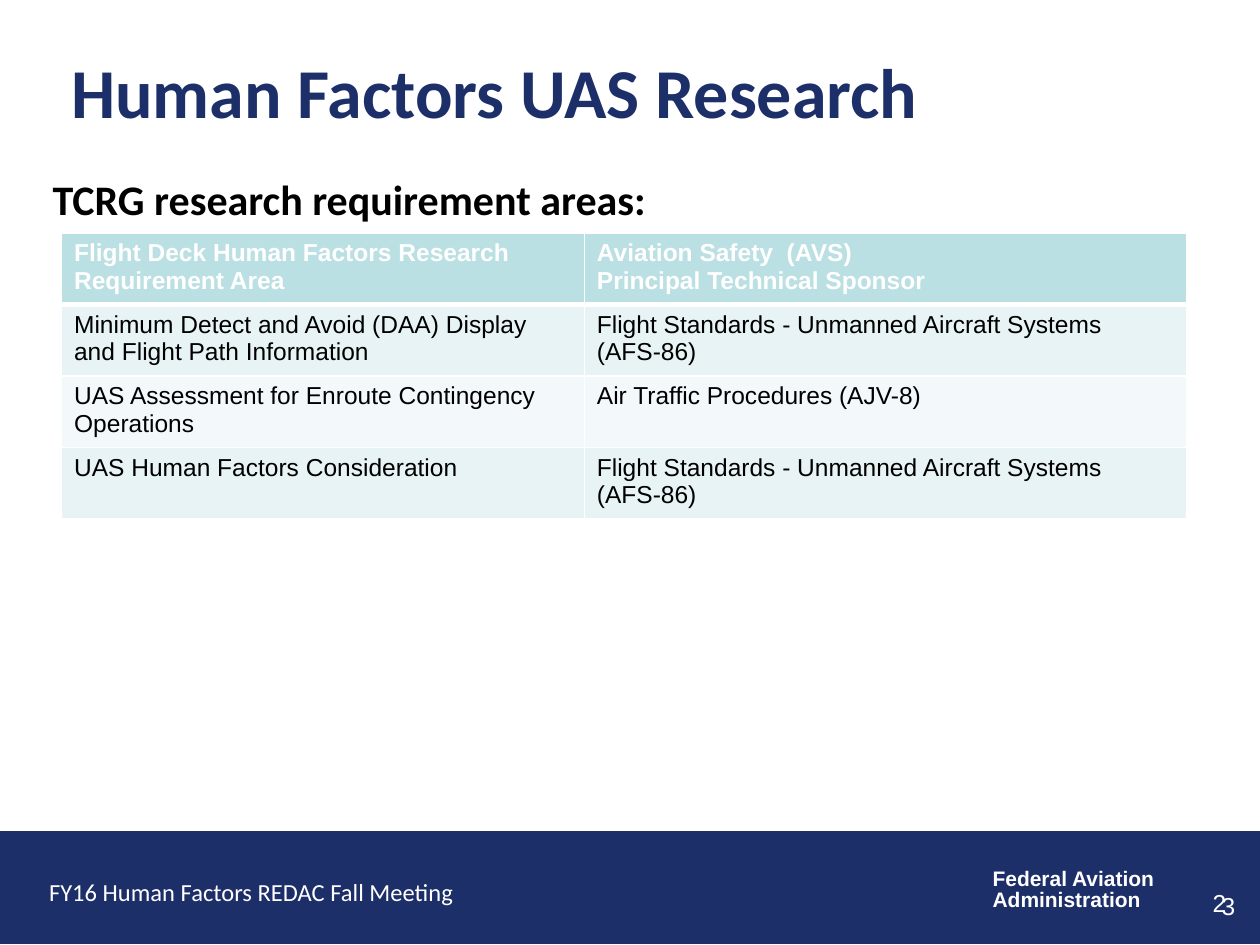
from lxml import etree
from pptx import Presentation
from pptx import util as u
from pptx.dml.color import RGBColor
from pptx.enum import shapes, text
from pptx.oxml.ns import qn

NAVY = RGBColor(0x1D, 0x2F, 0x68)
WHITE = RGBColor(0xFF, 0xFF, 0xFF)
BLACK = RGBColor(0, 0, 0)
HEADER_TEAL = RGBColor(0xBB, 0xE0, 0xE3)
BAND_DARK = RGBColor(0xE7, 0xF3, 0xF4)
BAND_LIGHT = RGBColor(0xF3, 0xF9, 0xFA)

REQUIREMENTS = [
    ("Flight Deck Human Factors Research Requirement Area",
     "Aviation Safety  (AVS)\vPrincipal Technical Sponsor"),
    ("Minimum Detect and Avoid (DAA) Display and Flight Path Information",
     "Flight Standards - Unmanned Aircraft Systems (AFS-86)"),
    ("UAS Assessment for Enroute Contingency Operations",
     "Air Traffic Procedures (AJV-8)"),
    ("UAS Human Factors Consideration",
     "Flight Standards - Unmanned Aircraft Systems (AFS-86)"),
]


def style(para, size, color, name="Arial", bold=False):
    """Set the font of a whole paragraph."""
    font = para.font
    font.name, font.size, font.bold = name, u.Pt(size), bold
    font.color.rgb = color


def add_text(page, box, lines, size, color, name="Arial", bold=False, wrap=True,
             align=text.PP_ALIGN.LEFT, anchor=text.MSO_ANCHOR.TOP, spacing=None):
    """Place lines of text in a box given in centimetres."""
    frame = page.shapes.add_textbox(*map(u.Cm, box)).text_frame
    frame.word_wrap = wrap
    frame.vertical_anchor = anchor
    frame.text = "\n".join(lines)
    for para in frame.paragraphs:
        para.alignment = align
        para.line_spacing = spacing
        style(para, size, color, name, bold)


def add_heading(page, left, top, width):
    """Place the title and the lead-in line below it."""
    add_text(page, (left, top, width, 1.7), ["Human Factors UAS Research"], 40, NAVY,
             "Calibri", True, anchor=text.MSO_ANCHOR.MIDDLE)
    add_text(page, (left - 0.38, top + 2.41, width, 1.42),
             ["TCRG research requirement areas:"], 24, BLACK, "Calibri", True)


def add_borders(cell, bottom):
    """Draw white cell borders with the given bottom width in points."""
    properties = cell._tc.get_or_add_tcPr()
    for side, width in (("L", 1), ("R", 1), ("T", 1), ("B", bottom)):
        line = etree.SubElement(properties, qn(f"a:ln{side}"), w=str(u.Pt(width)))
        fill = etree.SubElement(line, qn("a:solidFill"))
        etree.SubElement(fill, qn("a:srgbClr"), val=str(WHITE))


def add_requirements(page, left, top, widths, row_height):
    """Place the table of requirement areas and sponsors."""
    box = (left, top, sum(widths), row_height * len(REQUIREMENTS))
    table = page.shapes.add_table(len(REQUIREMENTS), len(widths), *map(u.Cm, box)).table
    for column, width in zip(table.columns, widths):
        column.width = u.Cm(width)
    for row, entries in enumerate(REQUIREMENTS):
        header = row == 0
        band = HEADER_TEAL if header else BAND_DARK if row % 2 else BAND_LIGHT
        for column, entry in enumerate(entries):
            cell = table.cell(row, column)
            add_borders(cell, 3 if header else 1)
            cell.fill.solid()
            cell.fill.fore_color.rgb = band
            cell.text = entry
            style(cell.text_frame.paragraphs[0], 14, WHITE if header else BLACK, bold=header)


def add_footer(page, left, top, width, height):
    """Place the footer band with its meeting, agency and page numbers."""
    band = page.shapes.add_shape(shapes.MSO_SHAPE.RECTANGLE,
                                 *map(u.Cm, (left, top, width, height)))
    band.shadow.inherit = False
    band.fill.solid()
    band.fill.fore_color.rgb = NAVY
    band.line.color.rgb = NAVY
    band.line.width = u.Pt(0.75)
    add_text(page, (left + 19.76, top + 0.64, 3.81, 1.12),
             ["Federal Aviation", "Administration"], 12, WHITE, bold=True,
             wrap=False, spacing=0.85)
    for number, x, y in (("3", 19.23, 1.07), ("2", 19.05, 1.02)):
        add_text(page, (left + x, top + y, 5.92, 0.9), [number], 14, WHITE,
                 align=text.PP_ALIGN.RIGHT)
    add_text(page, (left + 0.74, top + 0.79, 8.74, 0.86),
             ["FY16 Human Factors REDAC Fall Meeting"], 14, WHITE, "Calibri", wrap=False)


def main():
    """Build and save the deck."""
    deck = Presentation()
    deck.slide_width, deck.slide_height = u.Cm(25.4), u.Cm(19.05)
    page = deck.slides.add_slide(deck.slide_layouts[6])
    add_footer(page, 0, 16.76, 25.4, 2.26)
    add_heading(page, 1.19, 0.97, 23.55)
    add_requirements(page, 1.24, 4.7, (10.54, 12.14), 1.34)
    deck.save("out.pptx")


if __name__ == "__main__":
    main()
